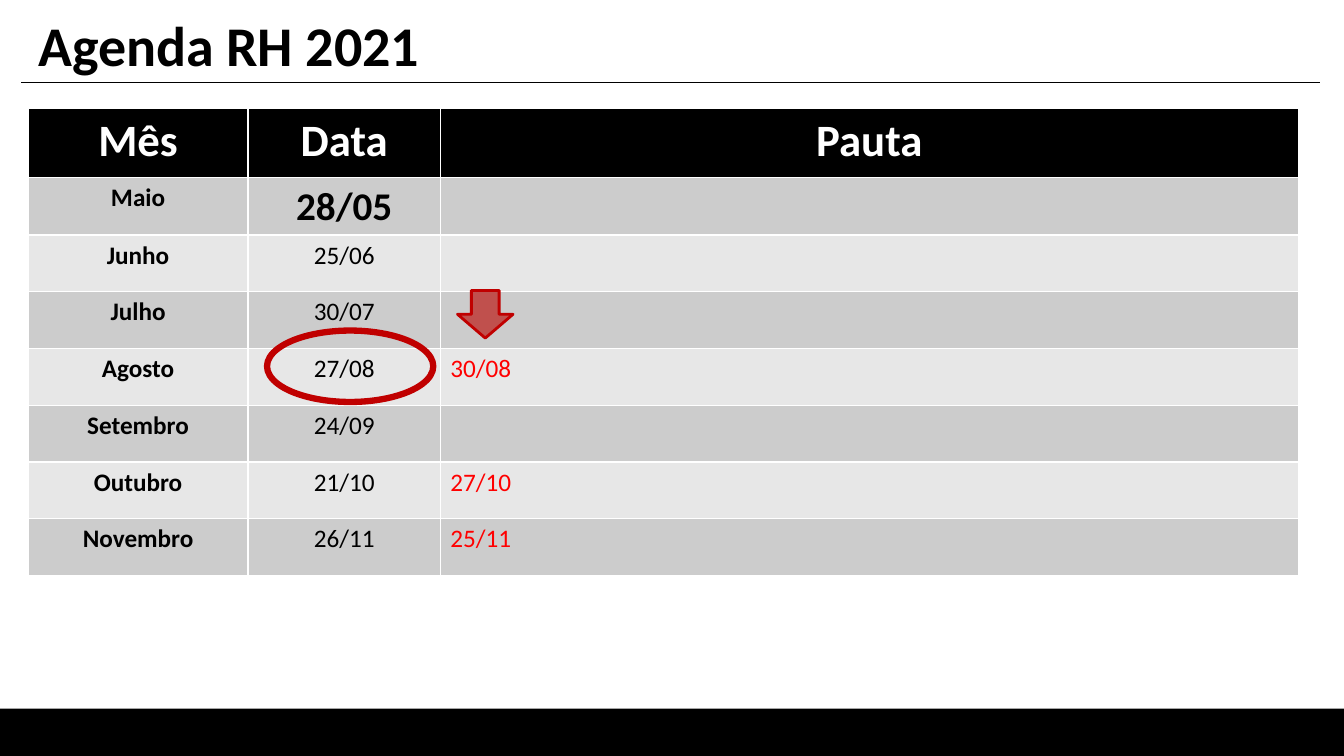
from dataclasses import dataclass

import pptx
import pptx.dml.color
import pptx.enum.shapes
import pptx.enum.text
import pptx.oxml.ns
import pptx.util
from lxml import etree
from pptx.util import Cm

ALIGN = pptx.enum.text.PP_ALIGN
SHAPE = pptx.enum.shapes.MSO_SHAPE


@dataclass(frozen=True)
class Theme:
    font: str = "Calibri"
    black: str = "000000"
    white: str = "FFFFFF"
    dark_band: str = "CCCCCC"
    light_band: str = "E7E7E7"
    changed_date: str = "FF0000"
    arrow: str = "C0504D"
    mark: str = "C00000"
    title_size: float = 40
    header_size: float = 32
    next_date_size: float = 28
    body_size: float = 18


THEME = Theme()
HEADERS = ("Mês", "Data", "Pauta")
MEETINGS = (
    ("Maio", "28/05", ""),
    ("Junho", "25/06", ""),
    ("Julho", "30/07", ""),
    ("Agosto", "27/08", "30/08"),
    ("Setembro", "24/09", ""),
    ("Outubro", "21/10", "27/10"),
    ("Novembro", "26/11", "25/11"),
)
COLUMN_WIDTHS = (5.54, 4.85, 21.62)
HEADER_HEIGHT = 1.75
ROW_HEIGHT = 1.43


def rgb(color):
    return pptx.dml.color.RGBColor.from_string(color)


def write(frame, text, size, color, bold, align):
    para = frame.paragraphs[0]
    para.text = text
    para.alignment = align
    para.font.name = THEME.font
    para.font.size = pptx.util.Pt(size)
    para.font.bold = bold
    para.font.color.rgb = rgb(color)


def add_title(page, text):
    title = page.shapes.title
    title.left, title.top, title.width, title.height = Cm(0.71), Cm(0.13), Cm(10.54), Cm(1.96)
    frame = title.text_frame
    write(frame, text, THEME.title_size, THEME.black, True, ALIGN.LEFT)
    frame.word_wrap = False
    frame.auto_size = pptx.enum.text.MSO_AUTO_SIZE.SHAPE_TO_FIT_TEXT
    frame.vertical_anchor = pptx.enum.text.MSO_ANCHOR.TOP


def add_rule(page, left, right, top):
    rule = page.shapes.add_connector(
        pptx.enum.shapes.MSO_CONNECTOR.STRAIGHT, Cm(left), Cm(top), Cm(right), Cm(top)
    )
    rule.line.color.rgb = rgb(THEME.black)
    rule.line.width = pptx.util.Pt(0.75)
    etree.SubElement(rule._element.spPr, pptx.oxml.ns.qn("a:effectLst"))


def add_figure(page, kind, left, top, width, height, fill=None, line=None, weight=0):
    figure = page.shapes.add_shape(kind, Cm(left), Cm(top), Cm(width), Cm(height))
    figure.shadow.inherit = False
    if fill:
        figure.fill.solid()
        figure.fill.fore_color.rgb = rgb(fill)
    else:
        figure.fill.background()
    if line:
        figure.line.color.rgb = rgb(line)
        figure.line.width = pptx.util.Pt(weight)
    else:
        figure.line.fill.background()


def fill_cell(cell, text, fill, size, color, bold, align=ALIGN.CENTER):
    cell.fill.solid()
    cell.fill.fore_color.rgb = rgb(fill)
    write(cell.text_frame, text, size, color, bold, align)


def add_agenda(page, left, top):
    height = HEADER_HEIGHT + ROW_HEIGHT * len(MEETINGS)
    table = page.shapes.add_table(
        len(MEETINGS) + 1, len(HEADERS), Cm(left), Cm(top), Cm(sum(COLUMN_WIDTHS)), Cm(height)
    ).table
    table.horz_banding = False
    for column, width in zip(table.columns, COLUMN_WIDTHS):
        column.width = Cm(width)
    for row in table.rows:
        row.height = Cm(ROW_HEIGHT)
    table.rows[0].height = Cm(HEADER_HEIGHT)

    for index, header in enumerate(HEADERS):
        fill_cell(table.cell(0, index), header, THEME.black, THEME.header_size, THEME.white, True)
    for index, (month, date, new_date) in enumerate(MEETINGS, start=1):
        band = THEME.dark_band if index % 2 else THEME.light_band
        is_next = index == 1
        date_size = THEME.next_date_size if is_next else THEME.body_size
        fill_cell(table.cell(index, 0), month, band, THEME.body_size, THEME.black, True)
        fill_cell(table.cell(index, 1), date, band, date_size, THEME.black, is_next)
        fill_cell(table.cell(index, 2), new_date, band, THEME.body_size,
                  THEME.changed_date, False, ALIGN.JUSTIFY)


def main():
    deck = pptx.Presentation()
    deck.slide_width, deck.slide_height = Cm(33.87), Cm(19.05)
    page = deck.slides.add_slide(deck.slide_layouts.get_by_name("Title Only"))
    add_figure(page, SHAPE.RECTANGLE, 0, 17.86, 33.87, 1.19, fill=THEME.black)
    add_rule(page, 0.53, 33.27, 2.08)
    add_title(page, "Agenda RH 2021")
    add_agenda(page, 0.71, 2.73)
    add_figure(page, SHAPE.DOWN_ARROW, 11.53, 7.32, 1.4, 1.2, THEME.arrow, THEME.mark, 2)
    add_figure(page, SHAPE.OVAL, 6.73, 8.33, 4.19, 1.8, line=THEME.mark, weight=4.5)
    deck.save("out.pptx")


if __name__ == "__main__":
    main()
